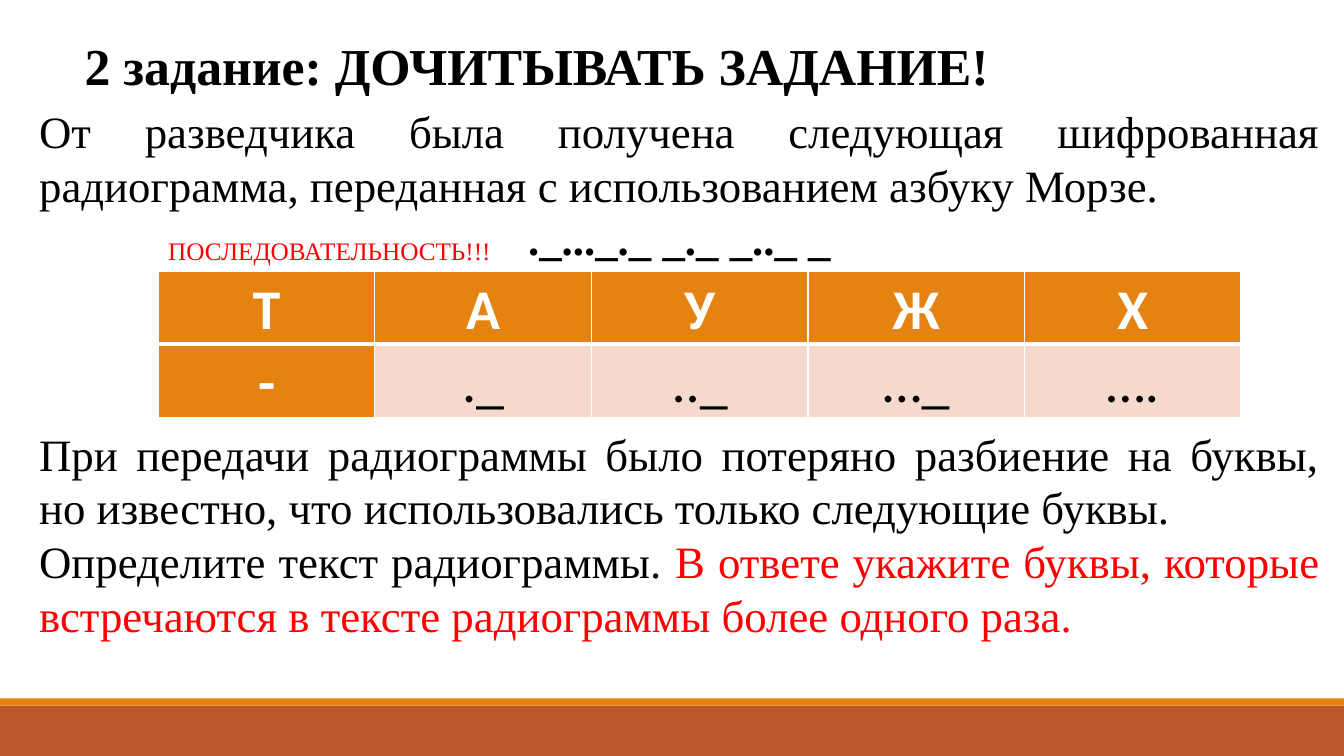
from dataclasses import dataclass

from pptx import Presentation
from pptx.dml.color import RGBColor
from pptx.enum.shapes import MSO_SHAPE as Shape
from pptx.enum.text import MSO_ANCHOR as Anchor, PP_ALIGN as Align
from pptx.oxml import parse_xml
from pptx.oxml.ns import nsdecls
from pptx.util import Inches, Pt

WIDE, HIGH = 13.33, 7.5
SERIF, SANS = "Times New Roman", "Calibri"
BLACK, WHITE, RED = "000000", "FFFFFF", "FF0000"
ORANGE, RUST, PINK = "E48312", "BD582C", "F5D9CC"
LINE = 38.4  # line pitch of the body, points


@dataclass
class Run:
    text: str
    color: str = BLACK
    size: float = 32
    bold: bool = False
    font: str = SERIF


@dataclass
class Para:
    runs: list[Run]
    form: dict


@dataclass
class Box:
    """A text box; area holds left, top, width, height in inches."""
    area: tuple[float, float, float, float]
    paras: list[Para]
    frame: dict


@dataclass
class Band:
    top: float
    tall: float
    color: str


BODY = {"alignment": Align.JUSTIFY, "line_spacing": Pt(LINE)}
BANDS = [Band(7, 0.5, RUST), Band(6.93, 0.07, ORANGE)]
BOXES = [
    Box((0.29, 0.95, 12.9, 5.49), [
        Para([Run("От разведчика была получена следующая шифрованная "
                  "радиограмма, переданная с использованием азбуку Морзе.")], BODY),
        Para([Run("._..._._ _._ _.._ _", bold=True)],
             BODY | {"alignment": Align.CENTER}),
        Para([Run("При передачи радиограммы было потеряно разбиение на буквы, "
                  "но известно, что использовались только следующие буквы.")],
             BODY | {"space_before": Pt(3 * LINE)}),
        Para([Run("Определите текст радиограммы. "),
              Run("В ответе укажите буквы, которые встречаются в тексте "
                  "радиограммы более одного раза.", RED)], BODY),
    ], {"vertical_anchor": Anchor.MIDDLE}),
    Box((0.61, 0.29, 10, 0.67),
        [Para([Run("2 задание: ДОЧИТЫВАТЬ ЗАДАНИЕ!", size=37, bold=True)], {})],
        {"margin_left": Inches(0.23)}),
    Box((1.57, 2.29, 3.44, 0.4),
        [Para([Run("ПОСЛЕДОВАТЕЛЬНОСТЬ!!!", RED, 18)], {})],
        {"word_wrap": False}),
]
CODES = {"Т": "-", "А": "._", "У": ".._", "Ж": "…_", "Х": "…."}


def rgb(code: str) -> RGBColor:
    return RGBColor.from_string(code)


def apply(thing, form: dict) -> None:
    for name, value in form.items():
        setattr(thing, name, value)


def write(para, plan: Para) -> None:
    apply(para, plan.form)
    for run in plan.runs:
        part = para.add_run()
        part.text = run.text
        apply(part.font, {"size": Pt(run.size), "bold": run.bold, "name": run.font})
        part.font.color.rgb = rgb(run.color)


def add_band(slide, band: Band) -> None:
    area = map(Inches, (0, band.top, WIDE, band.tall))
    shape = slide.shapes.add_shape(Shape.RECTANGLE, *area)
    shape.shadow.inherit = False
    shape.fill.solid()
    shape.fill.fore_color.rgb = rgb(band.color)
    shape.line.fill.background()


def add_box(slide, box: Box) -> None:
    frame = slide.shapes.add_textbox(*map(Inches, box.area)).text_frame
    apply(frame, {"word_wrap": True} | box.frame)
    for i, plan in enumerate(box.paras):
        write(frame.add_paragraph() if i else frame.paragraphs[0], plan)


def add_edges(cell, base: float) -> None:
    """Draw white borders, with the bottom one base points wide."""
    props = cell._tc.get_or_add_tcPr()
    for i, (side, width) in enumerate(zip("LRTB", (1, 1, 1, base))):
        props.insert(i, parse_xml(
            f'<a:ln{side} {nsdecls("a")} w="{Pt(width)}"><a:solidFill>'
            f'<a:srgbClr val="{WHITE}"/></a:solidFill></a:ln{side}>'))


def add_codes(slide) -> None:
    """Add the table of letters and their Morse codes."""
    grid = [list(CODES), list(CODES.values())]
    rows, cols = len(grid), len(CODES)
    area = map(Inches, (1.57, 2.69, 10.74, 0.72 * rows))
    table = slide.shapes.add_table(rows, cols, *area).table
    for r, row in enumerate(grid):
        for c, text in enumerate(row):
            cell = table.cell(r, c)
            head = r == 0 or c == 0
            apply(cell, {"margin_left": Inches(0.07), "margin_right": Inches(0.07),
                         "margin_top": 0, "margin_bottom": 0})
            cell.fill.solid()
            cell.fill.fore_color.rgb = rgb(ORANGE if head else PINK)
            run = Run(text, WHITE if head else BLACK, 40, head, SANS)
            write(cell.text_frame.paragraphs[0],
                  Para([run], {"alignment": Align.CENTER, "line_spacing": 1.07}))
            add_edges(cell, 1 if r else 3)


def main() -> None:
    deck = Presentation()
    apply(deck, {"slide_width": Inches(WIDE), "slide_height": Inches(HIGH)})
    slide = deck.slides.add_slide(deck.slide_layouts[6])
    for band in BANDS:
        add_band(slide, band)
    add_codes(slide)
    for box in BOXES:
        add_box(slide, box)
    deck.save("out.pptx")


if __name__ == "__main__":
    main()
